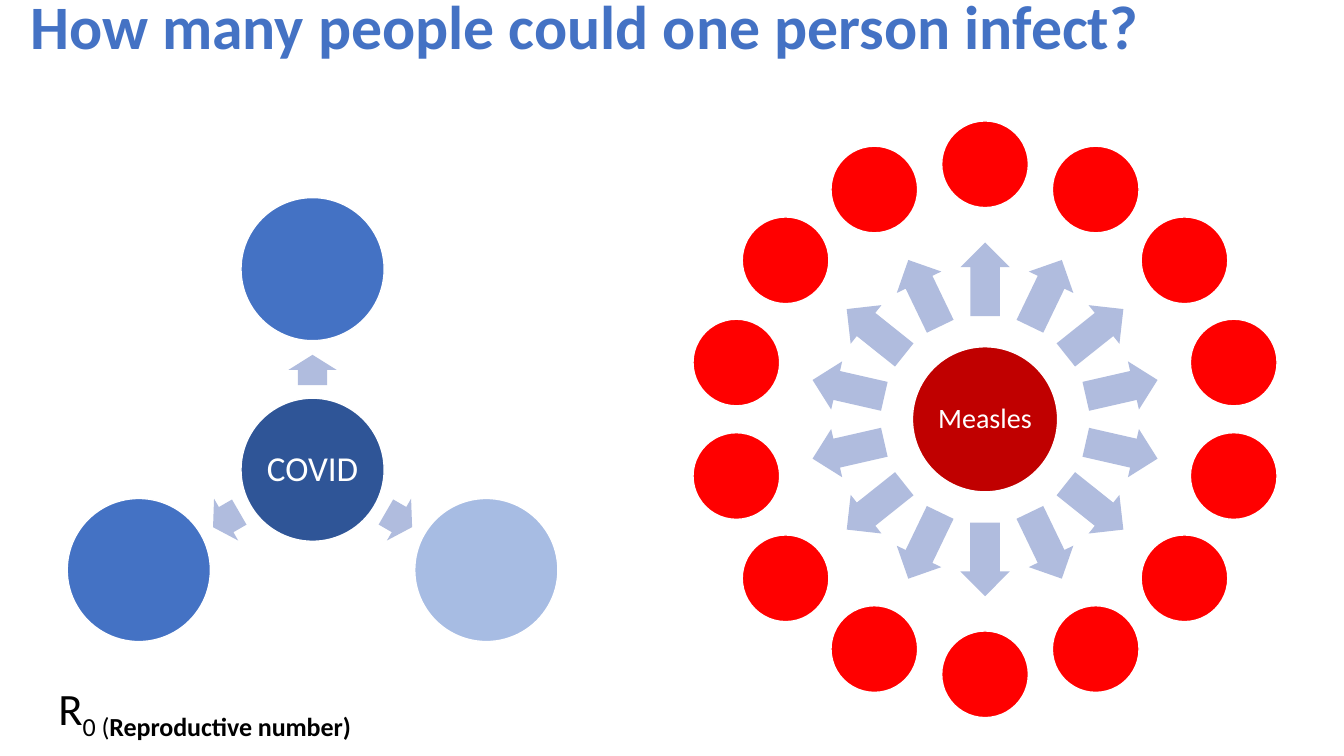
from collections import namedtuple
from dataclasses import dataclass
from math import cos, radians, sin

from lxml.etree import SubElement
from pptx import Presentation
from pptx.dml.color import RGBColor as Color
from pptx.enum.shapes import MSO_SHAPE as Shape
from pptx.enum.text import MSO_ANCHOR as Anchor, PP_ALIGN as Align
from pptx.oxml.ns import qn
from pptx.util import Inches, Pt

ROWS, COLUMNS = 75, 133.3
CELL = Inches(7.5) / ROWS

Box = namedtuple("Box", "left top width height")


@dataclass(frozen=True)
class Theme:
    font: str = "Calibri"
    blue: str = "4472C4"
    navy: str = "2F5597"
    red: str = "FF0000"
    crimson: str = "C00000"
    arrow: str = "B0BCDE"
    white: str = "FFFFFF"
    black: str = "000000"
    title_size: float = 44.1
    note_size: float = 32
    outline: float = 1


THEME = Theme()


@dataclass(frozen=True)
class Spread:
    label: str
    label_size: float
    hub: float
    hub_color: str
    dot: float
    dot_color: str
    count: int
    arrow_length: float
    arrow_width: float
    arrow_reach: float
    faded: tuple = ()


def emu(box):
    return [round(length * CELL) for length in box]


def add_span(para, text, size, color, bold=False):
    span = para.add_run()
    span.text = text
    formats = {"name": THEME.font, "size": Pt(size), "bold": bold}
    for name, value in formats.items():
        setattr(span.font, name, value)
    span.font.color.rgb = Color.from_string(color)
    return span


def add_text_box(page, box, **formats):
    frame = page.shapes.add_textbox(*emu(box)).text_frame
    for name, value in ({"word_wrap": True} | formats).items():
        setattr(frame, name, value)
    return frame.paragraphs[0]


def add_centred(page, kind, x, y, width, height, color):
    box = Box(x - width / 2, y - height / 2, width, height)
    shape = page.shapes.add_shape(kind, *emu(box))
    shape.shadow.inherit = False
    shape.fill.solid()
    shape.fill.fore_color.rgb = Color.from_string(color)
    shape.line.fill.background()
    return shape


def add_circle(page, x, y, size, color):
    circle = add_centred(page, Shape.OVAL, x, y, size, size, color)
    circle.line.color.rgb = Color.from_string(THEME.white)
    circle.line.width = Pt(THEME.outline)
    return circle


def fade(shape, percent):
    solid = shape.fill._xPr.find(qn("a:solidFill"))
    SubElement(solid[0], qn("a:alpha"), val=str(percent * 1000))


def add_hub(page, x, y, spread):
    hub = add_circle(page, x, y, spread.hub, spread.hub_color)
    frame = hub.text_frame
    inset = Inches(0.03)
    formats = {"margin_left": inset, "margin_right": inset, "margin_top": inset,
               "margin_bottom": inset, "vertical_anchor": Anchor.MIDDLE,
               "word_wrap": True}
    for name, value in formats.items():
        setattr(frame, name, value)
    para = frame.paragraphs[0]
    para.alignment = Align.CENTER
    para.line_spacing = 0.9
    add_span(para, spread.label, spread.label_size, THEME.white)


def add_spread(page, box, spread):
    x, y = box.left + box.width / 2, box.top + box.height / 2
    ring = (box.width - spread.dot) / 2
    add_hub(page, x, y, spread)
    for index in range(spread.count):
        angle = 360 * index / spread.count - 90
        across, down = cos(radians(angle)), sin(radians(angle))
        reach = spread.arrow_reach
        arrow = add_centred(page, Shape.RIGHT_ARROW, x + reach * across,
                            y + reach * down, spread.arrow_length,
                            spread.arrow_width, THEME.arrow)
        arrow.adjustments[0], arrow.adjustments[1] = 0.6, 0.5
        arrow.rotation = angle % 360
        dot = add_circle(page, x + ring * across, y + ring * down,
                         spread.dot, spread.dot_color)
        if index in spread.faded:
            fade(dot, 47)


def add_title(page, box):
    para = add_text_box(page, box, vertical_anchor=Anchor.MIDDLE,
                        margin_top=0, margin_bottom=0)
    para.line_spacing = 0.9
    add_span(para, "How many people could one person infect?",
             THEME.title_size, THEME.blue, bold=True)


def add_note(page, box):
    para = add_text_box(page, box)
    add_span(para, "R", THEME.note_size, THEME.black)
    for text, bold in (("0 (", False), ("Reproductive number)", True)):
        span = add_span(para, text, THEME.note_size, THEME.black, bold)
        span._r.get_or_add_rPr().set("baseline", "-25000")


def main():
    deck = Presentation()
    deck.slide_width, deck.slide_height = round(COLUMNS * CELL), round(ROWS * CELL)
    page = deck.slides.add_slide(deck.slide_layouts[6])
    covid = Spread(label="COVID", label_size=25, hub=14.2, hub_color=THEME.navy,
                   dot=14.2, dot_color=THEME.blue, count=3, arrow_length=3,
                   arrow_width=4.8, arrow_reach=9.9, faded=(1,))
    measles = Spread(label="Measles", label_size=20, hub=14.4,
                     hub_color=THEME.crimson, dot=8.6, dot_color=THEME.red,
                     count=14, arrow_length=7.3, arrow_width=4.9,
                     arrow_reach=13.9)
    add_title(page, Box(2, 0, 122.9, 5.8))
    add_spread(page, Box(4, 19.6, 54, 54), covid)
    add_spread(page, Box(68.1, 12, 59.2, 59.2), measles)
    add_note(page, Box(4.8, 67, 38.5, 6.4))
    deck.save("out.pptx")


if __name__ == "__main__":
    main()
